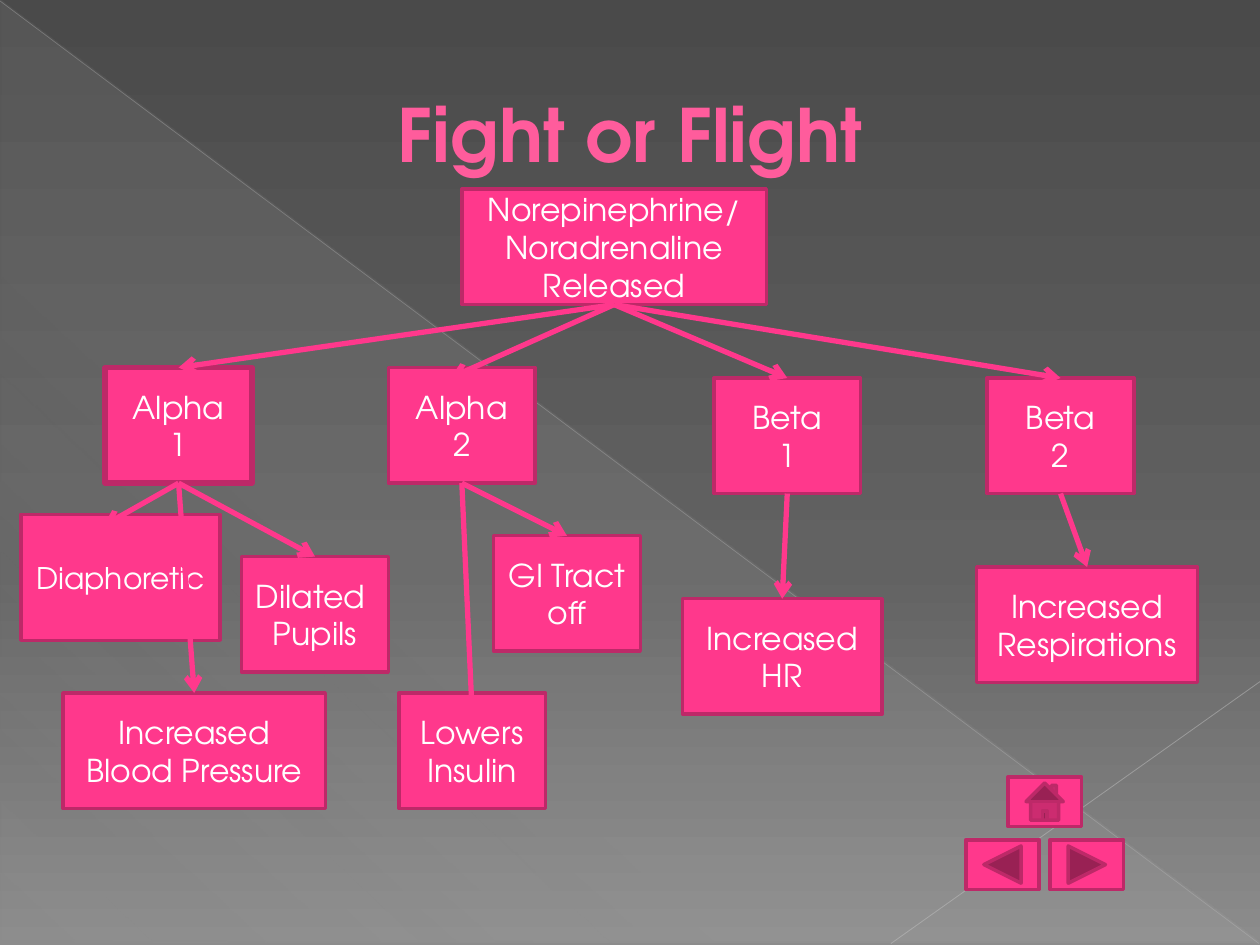
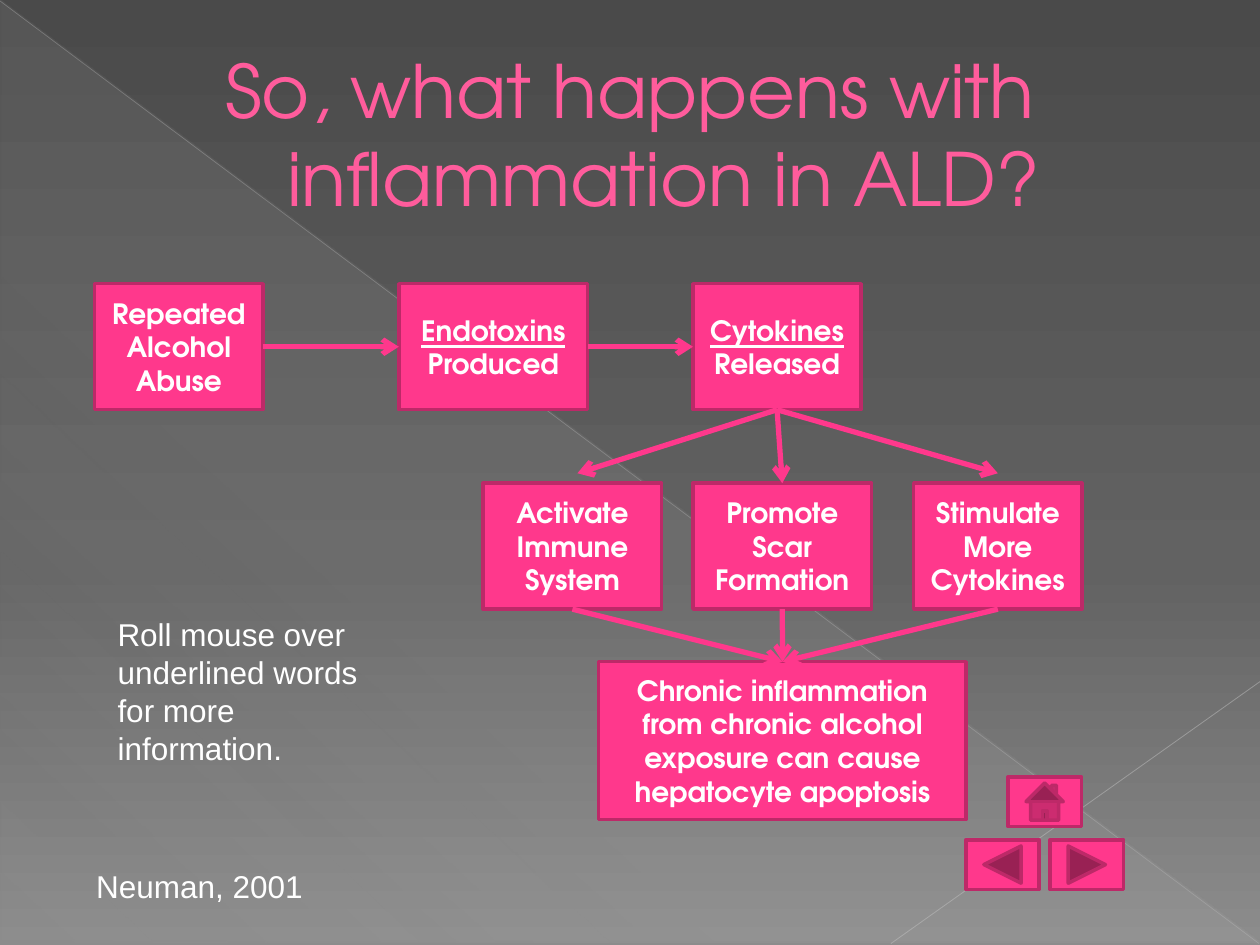
from lxml import etree
from pptx import Presentation
from pptx.dml.color import RGBColor
from pptx.enum.shapes import MSO_CONNECTOR, MSO_SHAPE
from pptx.enum.text import MSO_ANCHOR, MSO_AUTO_SIZE, PP_ALIGN
from pptx.oxml.ns import qn
from pptx.util import Cm, Pt

RECTANGLE = MSO_SHAPE.RECTANGLE
RIGHT_TRIANGLE = MSO_SHAPE.RIGHT_TRIANGLE
NEXT = MSO_SHAPE.ACTION_BUTTON_FORWARD_OR_NEXT
BACK = MSO_SHAPE.ACTION_BUTTON_BACK_OR_PREVIOUS
HOME = MSO_SHAPE.ACTION_BUTTON_HOME
STRAIGHT = MSO_CONNECTOR.STRAIGHT
CENTER = PP_ALIGN.CENTER
MIDDLE = MSO_ANCHOR.MIDDLE
GROW = MSO_AUTO_SIZE.SHAPE_TO_FIT_TEXT
TOP, LEFT, BOTTOM, RIGHT = range(4)

PINK = "FF388C"
DARK_PINK = "BD2968"
TITLE_PINK = "FF5C9C"
TITLE_OUTLINE = "B12761"
WHITE = "FFFFFF"
DISPLAY_FONT = "TeX Gyre Adventor"
CAPTION_FONT = "Arial"
BACKGROUND_STOPS = [(0, "4A4A4A", 100), (60, "626262", 100), (100, "8C8C8C", 100)]
TRIANGLE_STOPS = [(0, "D2D2D2", 10), (70, "D2D2D2", 8), (100, "D2D2D2", 1)]
BOX_HEIGHT = 2.33
SMALL_WIDTH = 2.96
STEP_HEIGHT = 2.54


def color(hex_value):
    return RGBColor.from_string(hex_value)


def add_child(parent, tag, **attributes):
    return etree.SubElement(parent, qn(tag), **attributes)


def add_color(parent, hex_value, opacity):
    element = add_child(parent, "a:srgbClr", val=hex_value)
    if opacity < 100:
        add_child(element, "a:alpha", val=str(opacity * 1000))


def set_gradient(fill, owner, stops, angle):
    fill.gradient()
    gradient = owner.find(".//" + qn("a:gradFill"))
    for child in list(gradient):
        gradient.remove(child)
    stop_list = add_child(gradient, "a:gsLst")
    for position, hex_value, opacity in stops:
        stop = add_child(stop_list, "a:gs", pos=str(position * 1000))
        add_color(stop, hex_value, opacity)
    add_child(gradient, "a:lin", ang=str(angle * 60000), scaled="0")


def add_line(slide, start, end, hex_value, width, opacity=100, arrow=False):
    line = slide.shapes.add_connector(STRAIGHT, *start, *end)
    line.line.color.rgb = color(hex_value)
    line.line.width = Pt(width)
    properties = line.element.spPr
    outline = properties.find(qn("a:ln"))
    if opacity < 100:
        solid = outline.find(qn("a:solidFill"))
        solid.clear()
        add_color(solid, hex_value, opacity)
    if arrow:
        add_child(outline, "a:tailEnd", type="arrow")
    add_child(properties, "a:effectLst")
    return line


def add_pink_shape(slide, kind, left, top, width, height, border=2):
    shape = slide.shapes.add_shape(kind, Cm(left), Cm(top), Cm(width), Cm(height))
    shape.shadow.inherit = False
    shape.fill.solid()
    shape.fill.fore_color.rgb = color(PINK)
    shape.line.color.rgb = color(DARK_PINK)
    shape.line.width = Pt(border)
    return shape


def add_run(paragraph, text, size, font_name=DISPLAY_FONT, hex_value=WHITE,
            bold=False, underline=False):
    run = paragraph.add_run()
    run.text = text
    run.font.size = Pt(size)
    run.font.name = font_name
    run.font.color.rgb = color(hex_value)
    run.font.bold = bold
    run.font.underline = underline
    return run


def add_box(slide, lines, left, top, width, height=BOX_HEIGHT, size=18,
            bold=False, border=2, underlined=""):
    box = add_pink_shape(slide, RECTANGLE, left, top, width, height, border)
    frame = box.text_frame
    frame.word_wrap = True
    frame.vertical_anchor = MIDDLE
    for index, line in enumerate(lines):
        paragraph = frame.add_paragraph() if index else frame.paragraphs[0]
        paragraph.alignment = CENTER
        if underlined:
            add_run(paragraph, underlined, size, bold=bold, underline=True)
        add_run(paragraph, line, size, bold=bold)
    return box


def add_step(slide, text, left, top, width, height=STEP_HEIGHT, underlined=""):
    return add_box(slide, [text], left, top, width, height, size=16, bold=True,
                   underlined=underlined)


def side_point(shape, side):
    horizontal = {LEFT: 0, RIGHT: shape.width}.get(side, shape.width // 2)
    vertical = {TOP: 0, BOTTOM: shape.height}.get(side, shape.height // 2)
    return shape.left + horizontal, shape.top + vertical


def join(slide, source, target, nudge=None, sides=(BOTTOM, TOP)):
    start = side_point(source, sides[0])
    end = side_point(target, sides[1])
    if nudge:
        end = end[0] + Cm(nudge[0]), end[1] + Cm(nudge[1])
    arrow = add_line(slide, start, end, PINK, 3, arrow=True)
    arrow.begin_connect(source, sides[0])
    if not nudge:
        arrow.end_connect(target, sides[1])


def add_caption(slide, text, left, top, width, height, wrap):
    caption = slide.shapes.add_textbox(Cm(left), Cm(top), Cm(width), Cm(height))
    caption.text_frame.word_wrap = wrap
    caption.text_frame.auto_size = GROW
    add_run(caption.text_frame.paragraphs[0], text, 18, CAPTION_FONT)


def add_title(slide, text, bold):
    title = slide.shapes.add_textbox(Cm(1.27), Cm(0.74), Cm(22.86), Cm(3.89))
    frame = title.text_frame
    frame.word_wrap = True
    frame.vertical_anchor = MIDDLE
    paragraph = frame.paragraphs[0]
    paragraph.alignment = CENTER
    properties = paragraph._p.get_or_add_pPr()
    properties.set("marL", str(Cm(1.35)))
    properties.set("indent", str(-Cm(1.35)))
    run = add_run(paragraph, text, 42, hex_value=TITLE_PINK, bold=bold)
    outline = etree.Element(qn("a:ln"), w=str(Pt(0.5)))
    add_color(add_child(outline, "a:solidFill"), TITLE_OUTLINE, 100)
    run._r.get_or_add_rPr().insert(0, outline)


def add_backdrop(slide):
    set_gradient(slide.background.fill, slide.element, BACKGROUND_STOPS, 90)
    triangle = slide.shapes.add_shape(RIGHT_TRIANGLE, Cm(0.02), 0, Cm(25.38), Cm(19))
    triangle.shadow.inherit = False
    triangle.line.fill.background()
    set_gradient(triangle.fill, triangle.element.spPr, TRIANGLE_STOPS, 133)
    corner = Cm(25.38), Cm(19.02)
    add_line(slide, (0, Cm(0.02)), corner, "BFBFBF", 0.39, 35)
    add_line(slide, (Cm(25.4), Cm(13.74)), (Cm(17.96), Cm(19.02)), "C6C6C6", 0.47, 45)
    for kind, left, top in ((NEXT, 21.17, 16.93), (BACK, 19.47, 16.93), (HOME, 20.32, 15.66)):
        add_pink_shape(slide, kind, left, top, 1.48, 1)


def start_slide(presentation, title, bold=False):
    slide = presentation.slides.add_slide(presentation.slide_layouts[6])
    add_backdrop(slide)
    add_title(slide, title, bold)
    return slide


def build_fight_or_flight(presentation):
    slide = start_slide(presentation, "Fight or Flight", bold=True)
    release = add_box(slide, ["Norepinephrine/", "Noradrenaline", "Released"], 9.31, 3.81, 6.14)
    alpha_1 = add_box(slide, ["Alpha", "1"], 2.12, 7.41, SMALL_WIDTH, border=3)
    alpha_2 = add_box(slide, ["Alpha", "2"], 7.83, 7.41, SMALL_WIDTH)
    beta_1 = add_box(slide, ["Beta", "1"], 14.39, 7.62, SMALL_WIDTH)
    beta_2 = add_box(slide, ["Beta", "2"], 19.9, 7.62, SMALL_WIDTH)
    sweating = add_box(slide, ["Diaphoretic"], 0.42, 10.37, 4.02, 2.54, size=17)
    pressure = add_box(slide, ["Increased Blood Pressure"], 1.27, 13.97, 5.29)
    pupils = add_box(slide, ["Dilated ", "Pupils"], 4.87, 11.22, SMALL_WIDTH)
    gut = add_box(slide, ["GI Tract ", "off"], 9.95, 10.8, SMALL_WIDTH)
    insulin = add_box(slide, ["Lowers", "Insulin"], 8.04, 13.97, SMALL_WIDTH)
    heart_rate = add_box(slide, ["Increased HR"], 13.76, 12.07, 4.02)
    breathing = add_box(slide, ["Increased", "Respirations"], 19.69, 11.43, 4.45)

    for source, target, nudge in (
        (release, alpha_2, (-0.22, 0.2)),
        (release, alpha_1, None),
        (release, beta_1, None),
        (release, beta_2, None),
        (alpha_1, sweating, (-0.33, 0.22)),
        (alpha_1, pressure, None),
        (alpha_1, pupils, None),
        (alpha_2, insulin, (0, 0.43)),
        (alpha_2, gut, None),
        (beta_2, breathing, None),
        (beta_1, heart_rate, None),
    ):
        join(slide, source, target, nudge)


def build_inflammation(presentation):
    slide = start_slide(presentation, "So, what happens with inflammation in ALD?")
    abuse = add_step(slide, "Repeated Alcohol Abuse", 1.91, 5.72, 3.39)
    cytokines = add_step(slide, " Released", 13.97, 5.72, 3.39, underlined="Cytokines")
    endotoxins = add_step(slide, " Produced", 8.04, 5.72, 3.81, underlined="Endotoxins")
    scar = add_step(slide, "Promote Scar Formation", 13.97, 9.74, 3.6)
    stimulate = add_step(slide, "Stimulate More Cytokines", 18.42, 9.74, 3.39)
    immune = add_step(slide, "Activate Immune System", 9.74, 9.74, 3.6)
    outcome = add_step(
        slide,
        "Chronic inflammation from chronic alcohol exposure can cause hepatocyte apoptosis",
        12.07, 13.34, 7.41, 3.18)

    for source, target in ((abuse, endotoxins), (endotoxins, cytokines)):
        join(slide, source, target, sides=(RIGHT, LEFT))
    for effect, nudge in ((immune, (0.1, -0.2)), (scar, None), (stimulate, (0, -0.2))):
        join(slide, cytokines, effect, nudge)
        join(slide, effect, outcome)

    add_caption(slide, "Roll mouse over underlined words for more information.",
                2.12, 12.28, 5.93, 3.33, wrap=True)
    add_caption(slide, "Neuman, 2001", 1.69, 17.36, 4.72, 1.02, wrap=False)


def main():
    presentation = Presentation()
    presentation.slide_width = Cm(25.4)
    presentation.slide_height = Cm(19.05)
    build_fight_or_flight(presentation)
    build_inflammation(presentation)
    presentation.save("out.pptx")


if __name__ == "__main__":
    main()
